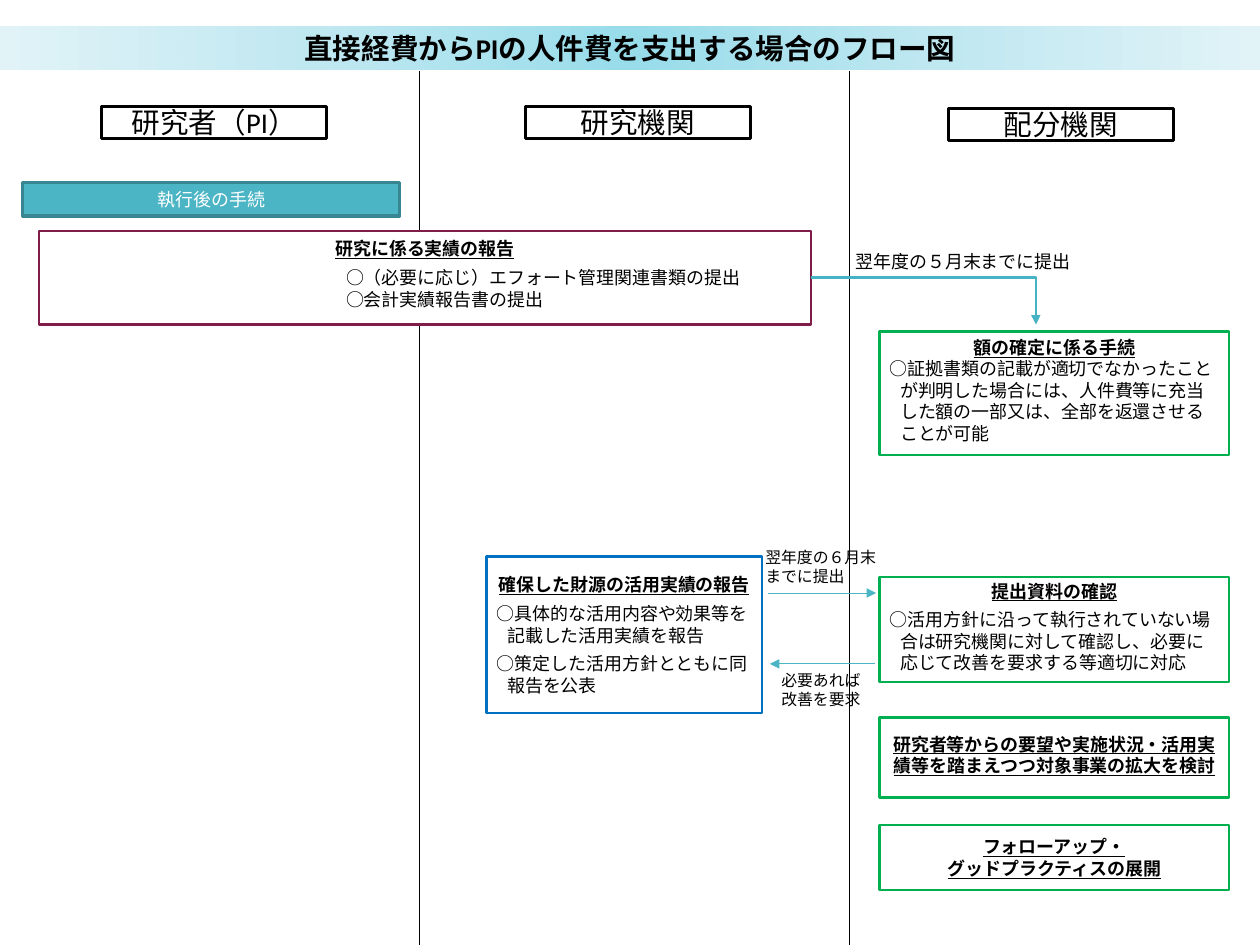
import dataclasses
import typing

import lxml.etree
import pptx
import pptx.dml.color
import pptx.enum.shapes
import pptx.enum.text
import pptx.oxml
import pptx.oxml.ns
import pptx.util

Inches = pptx.util.Inches
Pt = pptx.util.Pt
ALIGN = pptx.enum.text.PP_ALIGN
KIND = pptx.enum.shapes.MSO_CONNECTOR
qn = pptx.oxml.ns.qn

BLACK, WHITE = "000000", "FFFFFF"
TEAL, GREEN, BLUE, WINE = "4BB5C5", "00B050", "0070C0", "801C49"
SLIDE_W, SLIDE_H = 11.03, 8.27
AGENCY_X, AGENCY_W = 7.7, 3.06
BODY = 11.3
HANG = 0.09


@dataclasses.dataclass
class Para:
    text: str
    heading: bool = False
    before: float = 0
    left: float = HANG
    hang: float = HANG


@dataclasses.dataclass
class Box:
    x: float
    y: float
    w: float
    h: float
    line: str
    paras: list[Para]
    fill: typing.Optional[str] = None
    lift: float = 0  # extra bottom inset that raises the text


@dataclasses.dataclass
class Banner:
    x: float
    y: float
    w: float
    h: float
    text: str
    size: float = 18
    color: str = BLACK
    line: str = BLACK
    fill: typing.Optional[str] = None


@dataclasses.dataclass
class Label:
    x: float
    y: float
    w: float
    h: float
    size: float
    lines: list[str]


@dataclasses.dataclass
class Line:
    x1: float
    y1: float
    x2: float
    y2: float
    color: str
    width: float
    arrow: bool = False
    elbow: bool = False


def rgb(color: str) -> pptx.dml.color.RGBColor:
    return pptx.dml.color.RGBColor.from_string(color)


def add_text(tf, text: str, *, size: float = BODY, font: str = "Calibri", color: str = BLACK,
             bold: bool = False, underline: bool = False, align=ALIGN.LEFT,
             before: float = 0, left: float = 0, hang: float = 0) -> None:
    p = tf.paragraphs[0] if not tf.text else tf.add_paragraph()
    p.alignment = align
    if before:
        p.space_before = Pt(before)
    if left:
        pPr = p._p.get_or_add_pPr()
        pPr.set("marL", str(Inches(left)))
        pPr.set("indent", str(-Inches(hang)))
    r = p.add_run()
    r.text = text
    r.font.size, r.font.name = Pt(size), font
    r.font.bold, r.font.underline = bold, underline
    r.font.color.rgb = rgb(color)


def set_frame(tf, middle: bool = True, lift: float = 0) -> None:
    tf.word_wrap = True
    tf.auto_size = pptx.enum.text.MSO_AUTO_SIZE.NONE
    anchor = pptx.enum.text.MSO_ANCHOR
    tf.vertical_anchor = anchor.MIDDLE if middle else anchor.TOP
    tf.margin_left = tf.margin_right = Inches(0.09)
    tf.margin_top = Inches(0.05)
    tf.margin_bottom = Inches(0.05 + lift)


def add_rect(s, box: typing.Union[Box, Banner], width: float):
    sp = s.shapes.add_shape(pptx.enum.shapes.MSO_SHAPE.RECTANGLE,
                            *map(Inches, (box.x, box.y, box.w, box.h)))
    sp.shadow.inherit = False
    if box.fill:
        sp.fill.solid()
        sp.fill.fore_color.rgb = rgb(box.fill)
    else:
        sp.fill.background()
    sp.line.color.rgb = rgb(box.line)
    sp.line.width = Pt(width)
    return sp.text_frame


def add_box(s, box: Box) -> None:
    tf = add_rect(s, box, 1.5)
    set_frame(tf, lift=box.lift)
    for para in box.paras:
        add_text(tf, para.text, bold=para.heading, underline=para.heading,
                 align=ALIGN.CENTER if para.heading else ALIGN.LEFT,
                 before=para.before, left=para.left, hang=para.hang)


def add_banner(s, banner: Banner) -> None:
    tf = add_rect(s, banner, 2)
    set_frame(tf)
    add_text(tf, banner.text, size=banner.size, color=banner.color, align=ALIGN.CENTER)


def add_label(s, label: Label) -> None:
    tf = s.shapes.add_textbox(*map(Inches, (label.x, label.y, label.w, label.h))).text_frame
    set_frame(tf, middle=False)
    for text in label.lines:
        add_text(tf, text, size=label.size, font="Arial")


def add_line(s, line: Line) -> None:
    kind = KIND.ELBOW if line.elbow else KIND.STRAIGHT
    c = s.shapes.add_connector(kind, *map(Inches, (line.x1, line.y1, line.x2, line.y2)))
    c.line.color.rgb = rgb(line.color)
    c.line.width = Pt(line.width)
    spPr = c._element.spPr
    if line.arrow:
        lxml.etree.SubElement(spPr.find(qn("a:ln")), qn("a:tailEnd"), type="triangle")
    if line.elbow:  # turn down at the far end
        geom = spPr.find(qn("a:prstGeom"))
        lxml.etree.SubElement(geom.find(qn("a:avLst")), qn("a:gd"), name="adj1", fmla="val 99900")
    lxml.etree.SubElement(spPr, qn("a:effectLst"))


def add_title(s, text: str) -> None:
    sp = s.shapes.title
    sp.left, sp.top, sp.width, sp.height = map(Inches, (0, 0.23, SLIDE_W, 0.38))
    set_frame(sp.text_frame)
    add_text(sp.text_frame, text, size=18, bold=True, align=ALIGN.CENTER)
    # Radial gradient, darkest in the centre
    stops = "".join(f'<a:gs pos="{pos * 1000}"><a:srgbClr val="{color}"/></a:gs>'
                    for pos, color in ((0, "98DCEA"), (50, "C0E8F1"), (100, "E1F3F7")))
    sp._element.spPr.append(pptx.oxml.parse_xml(
        f'<a:gradFill {pptx.oxml.ns.nsdecls("a")}><a:gsLst>{stops}</a:gsLst><a:path path="circle">'
        '<a:fillToRect l="50000" t="50000" r="50000" b="50000"/></a:path></a:gradFill>'))


BANNERS = [
    Banner(0.89, 0.93, 1.97, 0.28, "研究者（PI）"),
    Banner(4.6, 0.93, 1.97, 0.28, "研究機関"),
    Banner(8.3, 0.95, 1.97, 0.28, "配分機関"),
    Banner(0.2, 1.6, 3.3, 0.29, "執行後の手続", BODY, WHITE, "378692", TEAL),
]

BOXES = [
    Box(0.34, 2.02, 6.76, 0.82, WINE, [
        Para("研究に係る実績の報告", True),
        Para("○（必要に応じ）エフォート管理関連書類の提出", before=5, left=2.6, hang=0),
        Para("○会計実績報告書の提出", left=2.6, hang=0)], WHITE, 0.07),
    Box(AGENCY_X, 2.9, AGENCY_W, 1.08, GREEN, [
        Para("額の確定に係る手続", True),
        Para("○証拠書類の記載が適切でなかったことが判明した場合には、"
             "人件費等に充当した額の一部又は、全部を返還させることが可能")], lift=0.05),
    Box(4.26, 4.87, 2.41, 1.37, BLUE, [
        Para("確保した財源の活用実績の報告", True),
        Para("○具体的な活用内容や効果等を記載した活用実績を報告", before=5),
        Para("○策定した活用方針とともに同報告を公表", before=4.5)]),
    Box(AGENCY_X, 5.05, AGENCY_W, 0.92, GREEN, [
        Para("提出資料の確認", True),
        Para("○活用方針に沿って執行されていない場合は研究機関に対して確認し、"
             "必要に応じて改善を要求する等適切に対応", before=4.5)], lift=0.05),
    Box(AGENCY_X, 6.28, AGENCY_W, 0.7, GREEN, [
        Para("研究者等からの要望や実施状況・活用実績等を踏まえつつ対象事業の拡大を検討",
             True, left=0, hang=0)], lift=0.05),
    Box(AGENCY_X, 7.22, AGENCY_W, 0.57, GREEN, [
        Para("フォローアップ・", True),
        Para("グッドプラクティスの展開", True)]),
]

LABELS = [
    Label(7.4, 2.14, 2.15, 0.29, BODY, ["翌年度の５月末までに提出"]),
    Label(6.61, 4.74, 1.3, 0.44, 10, ["翌年度の６月末", "までに提出"]),
    Label(6.75, 5.82, 0.96, 0.44, 10, ["必要あれば", "改善を要求"]),
]

DIVIDERS = [Line(x, 0.62, x, SLIDE_H, BLACK, 0.75) for x in (3.67, 7.44)]
ARROWS = [
    Line(7.1, 2.43, 9.07, 2.84, "46B3C4", 1.5, arrow=True, elbow=True),
    Line(6.72, 5.19, 7.67, 5.19, TEAL, 0.5, arrow=True),
    Line(7.66, 5.81, 6.74, 5.81, TEAL, 0.5, arrow=True),
]


def main() -> None:
    prs = pptx.Presentation()
    prs.slide_width, prs.slide_height = Inches(SLIDE_W), Inches(SLIDE_H)
    s = prs.slides.add_slide(prs.slide_layouts[5])
    add_title(s, "直接経費からPIの人件費を支出する場合のフロー図")
    # Column dividers lie behind the boxes
    for draw, items in ((add_line, DIVIDERS), (add_banner, BANNERS), (add_box, BOXES),
                        (add_label, LABELS), (add_line, ARROWS)):
        for item in items:
            draw(s, item)
    prs.save("out.pptx")


if __name__ == "__main__":
    main()
